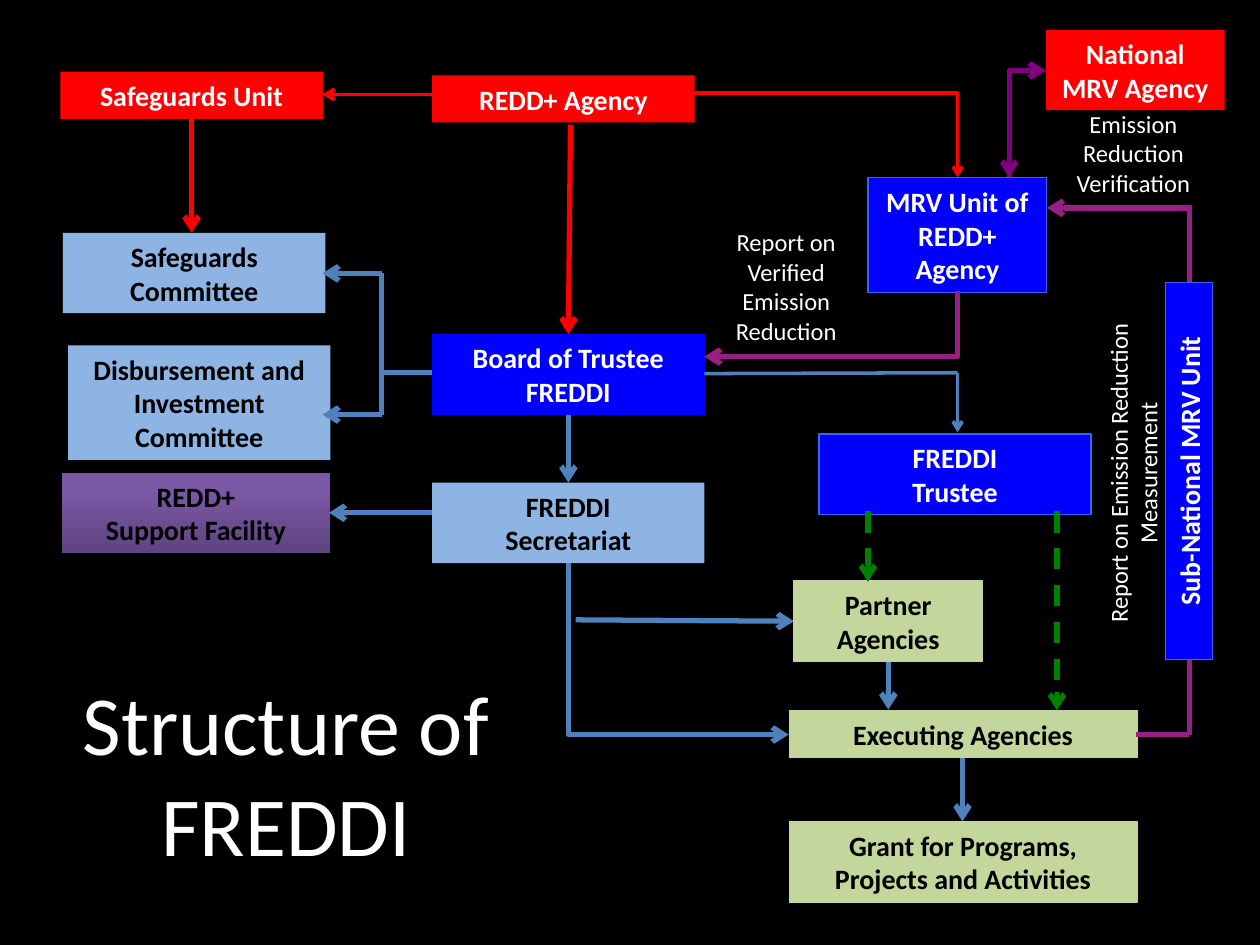
from dataclasses import dataclass

from lxml.etree import SubElement
from pptx import Presentation
from pptx.dml.color import RGBColor
from pptx.enum.dml import MSO_LINE
from pptx.enum.shapes import MSO_CONNECTOR, MSO_SHAPE
from pptx.enum.text import MSO_ANCHOR, MSO_AUTO_SIZE, PP_ALIGN
from pptx.oxml.ns import qn
from pptx.util import Pt


@dataclass(frozen=True)
class BoxStyle:
    fill: str
    text: str
    outline: str = ""
    gradient_end: str = ""


class Theme:
    font = "Calibri"
    title_size, box_size, label_size = 48, 16, 14
    background, light = "000000", "FFFFFF"
    red, blue, green = "FF0000", "4F81BD", "008000"
    magenta, purple = "982082", "800080"
    agency = BoxStyle(red, light)
    trustee = BoxStyle("0000FF", light, "3366FF")
    board = BoxStyle("0000FF", light, "0000FF")
    committee = BoxStyle("8EB4E3", background)
    facility = BoxStyle("5F4480", background, gradient_end="7B58A6")
    recipient = BoxStyle("C3D69B", background, "C3D69B")
    thick, thin, medium = 3, 2, 2.25
    box_heights = {1: 27, 2: 46, 3: 65.5}


def color(value):
    return RGBColor.from_string(value)


def write(text_frame, text, size, text_color, bold=False):
    text_frame.text = text
    text_frame.word_wrap = True
    text_frame.vertical_anchor = MSO_ANCHOR.MIDDLE
    for paragraph in text_frame.paragraphs:
        paragraph.alignment = PP_ALIGN.CENTER
        paragraph.font.name = Theme.font
        paragraph.font.size = Pt(size)
        paragraph.font.bold = bold
        paragraph.font.color.rgb = color(text_color)


@dataclass
class Region:
    slide: object
    left: float
    top: float

    def place(self, x, y):
        return Pt(self.left + x), Pt(self.top + y)

    def box(self, text, x, y, width, lines, style, rotation=0):
        height = Theme.box_heights[lines]
        shape = self.slide.shapes.add_shape(
            MSO_SHAPE.RECTANGLE, *self.place(x, y), Pt(width), Pt(height))
        shape.shadow.inherit = False
        shape.rotation = rotation
        if style.gradient_end:
            shape.fill.gradient()
            shape.fill.gradient_angle = 90
            first, last = shape.fill.gradient_stops
            first.color.rgb, last.color.rgb = color(style.fill), color(style.gradient_end)
            first.position, last.position = 0, 0.8
        else:
            shape.fill.solid()
            shape.fill.fore_color.rgb = color(style.fill)
        if style.outline:
            shape.line.color.rgb = color(style.outline)
            shape.line.width = Pt(0.75)
        else:
            shape.line.fill.background()
        write(shape.text_frame, text, Theme.box_size, style.text, bold=True)

    def label(self, text, x, y, width, height, rotation=0):
        shape = self.slide.shapes.add_textbox(*self.place(x, y), Pt(width), Pt(height))
        shape.rotation = rotation
        write(shape.text_frame, text, Theme.label_size, Theme.light)
        shape.text_frame.auto_size = MSO_AUTO_SIZE.SHAPE_TO_FIT_TEXT

    def line(self, start, end, line_color, width=Theme.thick, arrow="tailEnd",
             dashed=False, kind=MSO_CONNECTOR.STRAIGHT):
        connector = self.slide.shapes.add_connector(kind, *self.place(*start), *self.place(*end))
        connector.line.color.rgb = color(line_color)
        connector.line.width = Pt(width)
        if dashed:
            connector.line.dash_style = MSO_LINE.DASH
        properties = connector.element.spPr
        if arrow:
            SubElement(properties.find(qn("a:ln")), qn(f"a:{arrow}"), type="arrow")
        SubElement(properties, qn("a:effectLst"))
        return connector

    def elbow(self, start, end, line_color, width=Theme.thick, arrow="tailEnd"):
        connector = self.line(start, end, line_color, width, arrow, kind=MSO_CONNECTOR.ELBOW)
        connector.element.spPr.find(qn("a:prstGeom")).set("prst", "bentConnector2")


def draw_committees(region):
    region.line((75, 27), (75, 92), Theme.red)
    region.box("Safeguards Unit", 0, 0, 150, 1, Theme.agency)
    region.box("Safeguards Committee", 1.5, 92, 150, 2, Theme.committee)
    region.box("Disbursement and Investment Committee", 4.4, 156.3, 150, 3, Theme.committee)
    region.box("REDD+\nSupport Facility", 0.8, 229, 153.4, 2, Theme.facility)


def draw_board(region):
    center, branch, committee_edge, trustee = 77.8, -28.8, -62.7, 300.2
    region.line((28, 11), (committee_edge, 11), Theme.red, Theme.medium)
    region.elbow((126, 10.3), (trustee, 58.5), Theme.red, Theme.thin)
    region.line((79, 28.3), (center, 148), Theme.red)
    region.box("REDD+ Agency", 0, 0, 150, 1, Theme.agency)
    region.box("Board of Trustee\vFREDDI", 0, 148, 155.5, 2, Theme.board)
    region.box("FREDDI\nSecretariat", 0, 232.8, 155.5, 2, Theme.committee)
    region.line((center, 194), (center, 232.8), Theme.blue)
    region.line((branch, 113.2), (branch, 193.9), Theme.blue, arrow="")
    for y in (113.2, 193.9):
        region.line((branch, y), (committee_edge, y), Theme.blue)
    region.line((branch, 170), (0, 170), Theme.blue, arrow="")
    region.line((0, 250), (-59, 250), Theme.blue)
    region.line((155.5, 170.5), (trustee, 170), Theme.blue, Theme.thin, arrow="")
    region.line((trustee, 170), (trustee, 204), Theme.blue, Theme.thin)
    region.elbow((203.7, 376.8), (center, 278.8), Theme.blue, arrow="headEnd")
    region.line((82, 311.2), (206.6, 312), Theme.blue)


def draw_funding(region):
    region.box("FREDDI\nTrustee", 17, 0, 155.5, 2, Theme.trustee)
    region.box("Partner Agencies", 2.6, 84, 108, 2, Theme.recipient)
    region.box("Executing Agencies", 0, 158, 198.7, 1, Theme.recipient)
    region.box("Grant for Programs, Projects and Activities", 0, 221.4, 198.7, 2, Theme.recipient)
    for x, end in ((45, 84.5), (153, 158)):
        region.line((x, 44.3), (x, end), Theme.green, dashed=True)
    region.line((56.6, 130), (56.6, 157.5), Theme.blue)
    region.line((99, 185), (99, 221.4), Theme.blue)


def draw_measurement(region):
    spine, verification = 183.7, 80.7
    region.line((spine, 402.8), (spine, 100.4), Theme.magenta, arrow="")
    region.line((spine, 402.8), (153.4, 402.8), Theme.magenta, arrow="")
    region.line((spine, 101.8), (102.3, 101.8), Theme.magenta)
    region.elbow((101.6, 23.3), (verification, 91), Theme.purple, arrow="headEnd")
    region.box("MRV Unit of REDD+ Agency", 0, 84.5, 102.2, 3, Theme.trustee)
    region.box("National MRV Agency", 101.6, 0, 102.2, 2, Theme.agency)
    region.box("Sub-National MRV Unit", 75.7, 238.6, 215.3, 1, Theme.trustee, 270)
    region.elbow((-93.5, 186.8), (51.2, 149.3), Theme.magenta, arrow="headEnd")
    region.line((verification, 70.8), (verification, 84.5), Theme.purple)
    region.line((101, 23.3), (101.6, 23.3), Theme.purple)
    region.label("Report on Verified Emission Reduction", -93.5, 109, 93.6, 75)
    region.label("Report on Emission Reduction Measurement", 21, 232.8, 260.6, 41, 270)
    region.label("Emission Reduction Verification", 93.7, 41.3, 116, 58.3)


def draw_title(region):
    title = region.slide.shapes.title
    title.left, title.top = region.place(0, 0)
    title.width, title.height = Pt(299.5), Pt(157)
    write(title.text_frame, "Structure of FREDDI", Theme.title_size, Theme.light)


def main():
    presentation = Presentation()
    presentation.slide_width, presentation.slide_height = Pt(720), Pt(540)
    slide = presentation.slides.add_slide(presentation.slide_layouts[5])
    slide.background.fill.solid()
    slide.background.fill.fore_color.rgb = color(Theme.background)
    draw_title(Region(slide, 13.7, 363))
    draw_committees(Region(slide, 34.5, 41))
    draw_board(Region(slide, 247, 43))
    draw_funding(Region(slide, 451, 248))
    draw_measurement(Region(slide, 496, 17))
    presentation.save("out.pptx")


if __name__ == "__main__":
    main()
